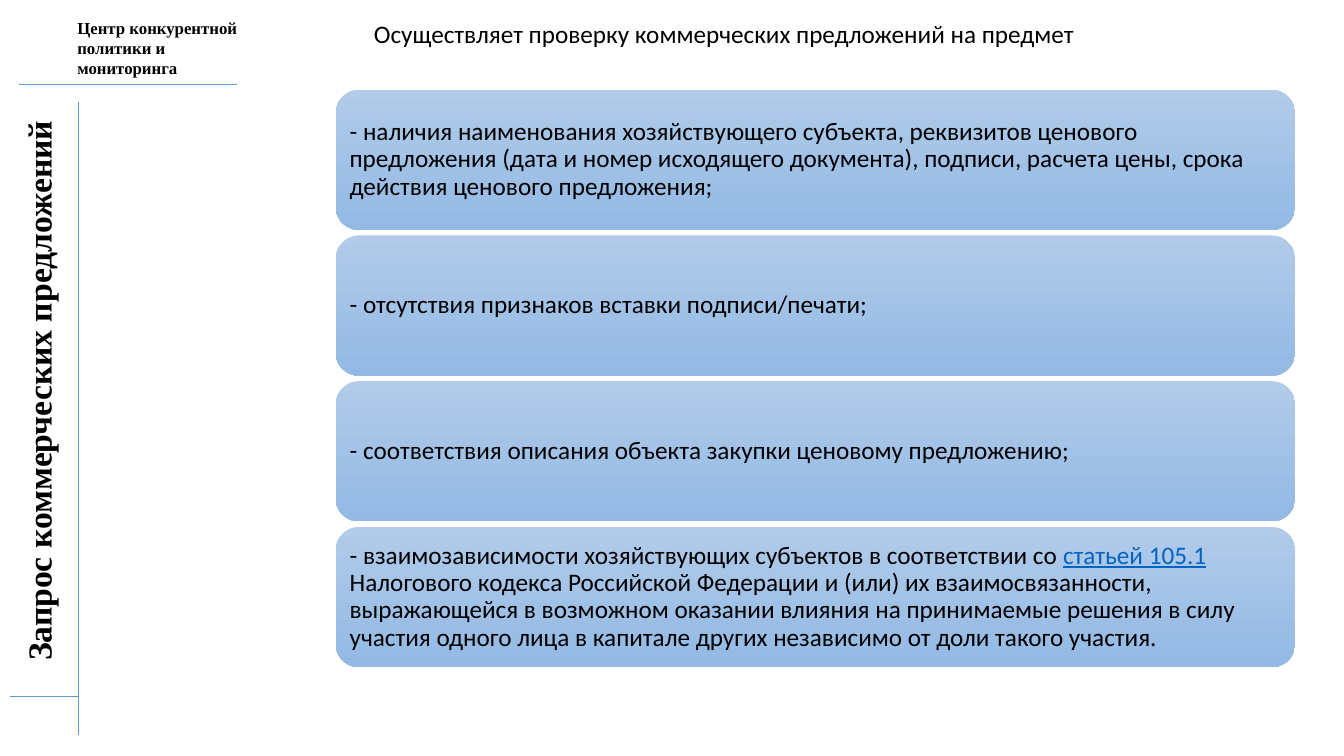
from pptx import Presentation
from pptx.dml.color import RGBColor
from pptx.enum.shapes import MSO_CONNECTOR, MSO_SHAPE
from pptx.enum.text import MSO_ANCHOR, PP_ALIGN
from pptx.oxml.ns import qn
from pptx.util import Cm, Pt
from lxml import etree

LINE, ROUNDED = MSO_CONNECTOR.STRAIGHT, MSO_SHAPE.ROUNDED_RECTANGLE
TOP, MIDDLE = MSO_ANCHOR.TOP, MSO_ANCHOR.MIDDLE
LEFT, CENTER = PP_ALIGN.LEFT, PP_ALIGN.CENTER

COLORS = {"text": "000000", "link": "0563C1", "rule": "5B9BD5",
          "card_top": "B1CBE9", "card_bottom": "93B9E4"}
SERIF, SANS = "Times New Roman", "Calibri"

CHECKS = [
    ["- наличия наименования хозяйствующего субъекта, реквизитов ценового предложения "
     "(дата и номер исходящего документа), подписи, расчета цены, срока действия "
     "ценового предложения;"],
    ["- отсутствия признаков вставки подписи/печати;"],
    ["- соответствия описания объекта закупки ценовому предложению;"],
    ["- взаимозависимости хозяйствующих субъектов в соответствии со ",
     ("статьей 105.1", {"color": "link", "underline": True}),
     " Налогового кодекса Российской Федерации и (или) их взаимосвязанности, "
     "выражающейся в возможном оказании влияния на принимаемые решения в силу "
     "участия одного лица в капитале других независимо от доли такого участия."],
]


def rgb(name):
    return RGBColor.from_string(COLORS[name])


def add_run(p, text, size=18, font=SANS, color="text", bold=False, underline=False):
    r = p.add_run()
    r.text = text
    r.font.size, r.font.name = Pt(size), font
    r.font.bold, r.font.underline = bold, underline
    r.font.color.rgb = rgb(color)


def write(tf, paragraphs, align=LEFT, anchor=TOP, wrap=True, spacing=1.0, **fmt):
    """Each paragraph is a list of strings or (string, format) pairs."""
    tf.word_wrap, tf.vertical_anchor = wrap, anchor
    for i, parts in enumerate(paragraphs):
        p = tf.add_paragraph() if i else tf.paragraphs[0]
        p.alignment, p.line_spacing = align, spacing
        p.space_before = Pt(0)
        for part in parts:
            text, extra = (part, {}) if isinstance(part, str) else part
            add_run(p, text, **{**fmt, **extra})


def add_rule(s, x1, y1, x2, y2):
    line = s.shapes.add_connector(LINE, Cm(x1), Cm(y1), Cm(x2), Cm(y2))
    line.line.color.rgb, line.line.width = rgb("rule"), Pt(0.5)
    etree.SubElement(line._element.spPr, qn("a:effectLst"))


def add_title(s, x, y, w, h):
    title = s.shapes.title
    title.left, title.top, title.width, title.height = Cm(x), Cm(y), Cm(w), Cm(h)
    write(title.text_frame, [["Осуществляет проверку коммерческих предложений на предмет"]])


def add_department(s, x, y, w, h):
    sp = s.shapes.add_textbox(Cm(x), Cm(y), Cm(w), Cm(h))
    write(sp.text_frame, [["Центр конкурентной"], ["политики и мониторинга"]],
          anchor=MIDDLE, size=12, font=SERIF, bold=True)
    add_rule(s, 0.48, y + h, 5.97, y + h)


def add_sidebar(s, x, y, w, h):
    """Section name reading upwards, with the rules beside and below it."""
    sp = s.shapes.add_textbox(Cm(x), Cm(y), Cm(w), Cm(h))
    tf = sp.text_frame
    tf._txBody.bodyPr.set("vert", "vert270")
    write(tf, [["Запрос коммерческих предложений"]], align=CENTER, wrap=False,
          size=24, font=SERIF, bold=True)
    rule_x, rule_y = x + w + 0.1, y + h + 0.59
    add_rule(s, rule_x, y - 0.17, rule_x, rule_y + 0.97)
    add_rule(s, 0.25, rule_y, rule_x, rule_y)


def add_card(s, x, y, w, h, parts):
    sp = s.shapes.add_shape(ROUNDED, Cm(x), Cm(y), Cm(w), Cm(h))
    sp.shadow.inherit = False
    sp.line.fill.background()
    sp.fill.gradient()
    sp.fill.gradient_angle = 270
    for stop, name in zip(sp.fill.gradient_stops, ("card_top", "card_bottom")):
        stop.color.rgb = rgb(name)
    tf = sp.text_frame
    tf.margin_left = tf.margin_right = tf.margin_top = tf.margin_bottom = Cm(0.18)
    write(tf, [parts], anchor=MIDDLE, spacing=0.9)


def add_checks(s, x, y, w, h, gap=0.14):
    card_h = (h + gap) / len(CHECKS) - gap
    for i, parts in enumerate(CHECKS):
        add_card(s, x, y + i * (card_h + gap), w, card_h, parts)


def main():
    prs = Presentation()
    prs.slide_width, prs.slide_height = Cm(33.87), Cm(19.05)
    s = prs.slides.add_slide(prs.slide_layouts[5])
    add_department(s, 1.7, 0.28, 5.26, 1.85)
    add_sidebar(s, 0.33, 2.74, 1.55, 14.22)
    add_checks(s, 8.46, 2.26, 24.18, 14.55)
    add_title(s, 9.17, 0.33, 19.63, 1.02)
    prs.save("out.pptx")


if __name__ == "__main__":
    main()
